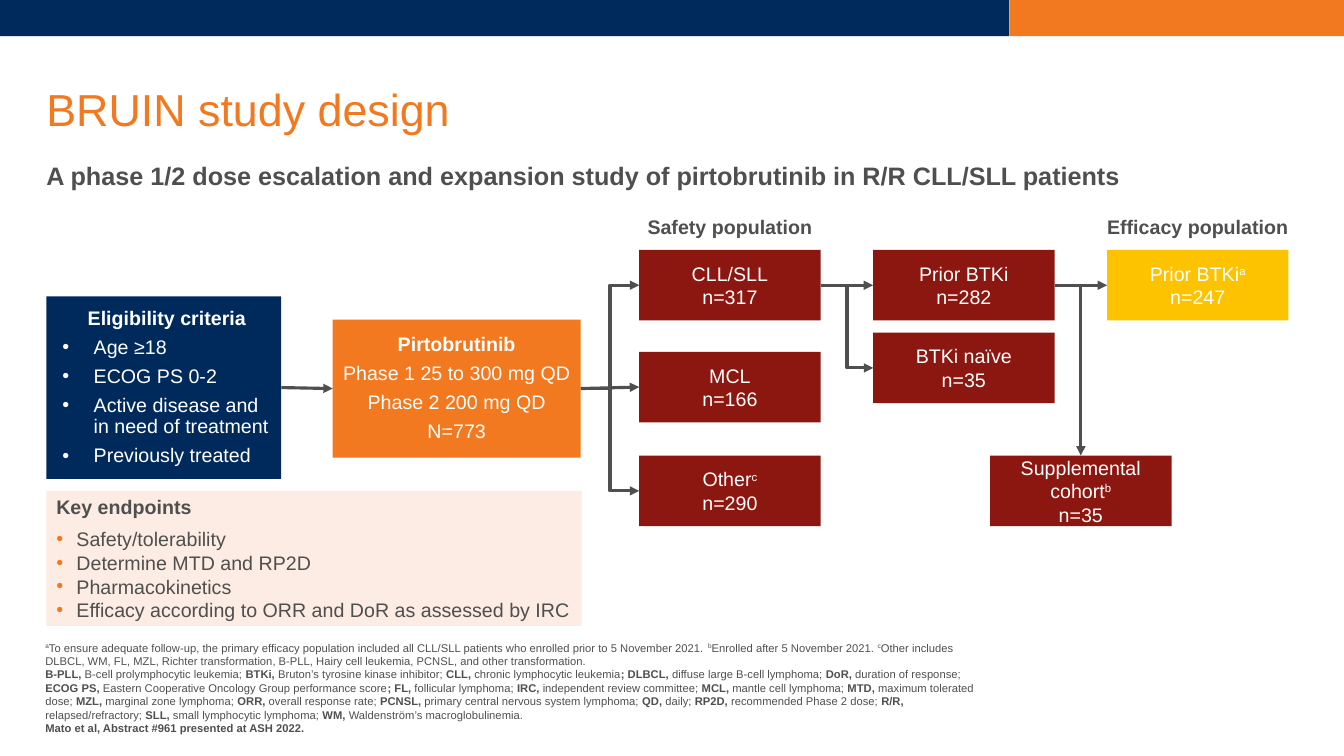
from lxml import etree
from pptx import Presentation, util as u
from pptx.dml.color import RGBColor
from pptx.enum import shapes, text
from pptx.oxml import ns

NAVY = RGBColor(0x00, 0x2A, 0x5C)
ORANGE = RGBColor(0xF3, 0x79, 0x20)
RED = RGBColor(0x8C, 0x16, 0x10)
GOLD = RGBColor(0xFD, 0xC3, 0x00)
PEACH = RGBColor(0xFD, 0xEC, 0xE3)
GREY = RGBColor(0x4E, 0x4F, 0x4E)
WHITE = RGBColor(0xFF, 0xFF, 0xFF)

MID = text.MSO_ANCHOR.MIDDLE
LOW = text.MSO_ANCHOR.BOTTOM
LEFT = {"alignment": text.PP_ALIGN.LEFT}
CENTER = {"alignment": text.PP_ALIGN.CENTER}
TIGHT = {"line_spacing": 0.9}
LOOSE = {**TIGHT, "space_after": u.Pt(5.6)}
SIDES = ("margin_left", "margin_top", "margin_right", "margin_bottom")
TOP, WEST, SOUTH, EAST = range(4)


def put(item, form):
    for name, value in form.items():
        setattr(item, name, value)


def add(parent, tag, **attrs):
    return etree.SubElement(parent, ns.qn(tag), attrs)


class Deck:
    def __init__(self):
        self.file = Presentation()
        put(self.file, {"slide_width": u.Inches(13.33), "slide_height": u.Inches(7.5)})
        self.slide = self.file.slides.add_slide(self.file.slide_layouts[6])
        self.font = {"name": "Arial", "size": u.Pt(14)}

    def box(self, place, fill):
        box = self.slide.shapes.add_shape(shapes.MSO_SHAPE.RECTANGLE, *map(u.Inches, place))
        box.shadow.inherit = False
        box.fill.solid()
        box.fill.fore_color.rgb = fill
        box.line.fill.background()
        return box

    def words(self, shape, lines, ink=WHITE, size=14, anchor=MID,
              pads=(0.1, 0.05, 0.1, 0.05), head=CENTER, item=LEFT, indent=0.2, dot=None):
        frame = shape.text_frame
        put(frame, {"word_wrap": True, "vertical_anchor": anchor})
        put(frame, dict(zip(SIDES, map(u.Inches, pads))))
        for num, line in enumerate(lines):
            para = frame.paragraphs[0] if num == 0 else frame.add_paragraph()
            listed = line.startswith("•")
            if listed:
                self.bullet(para, indent, dot)
            put(para, item if listed else head)
            self.runs(para, line.lstrip("• "), ink, size)

    def bullet(self, para, indent, dot):
        props = para._p.get_or_add_pPr()
        props.set("marL", str(u.Inches(indent)))
        props.set("indent", str(-u.Inches(indent)))
        if dot:
            add(add(props, "a:buClr"), "a:srgbClr", val=str(dot))
        add(props, "a:buFont", typeface="Arial")
        add(props, "a:buChar", char="•")

    def runs(self, para, line, ink, size):
        for odd, part in enumerate(line.split("*")):
            for high, bit in enumerate(part.split("^")):
                if not bit:
                    continue
                run = para.add_run()
                run.text = bit
                put(run.font, {**self.font, "size": u.Pt(size), "bold": odd % 2 == 1})
                run.font.color.rgb = ink
                if high % 2:
                    run.font._element.set("baseline", "30000")

    def label(self, place, lines, **style):
        self.words(self.slide.shapes.add_textbox(*map(u.Inches, place)), lines, **style)

    def node(self, left, top, lines, fill=RED):
        node = self.box((left, top, 1.8, 0.7), fill)
        self.words(node, lines)
        return node

    def arrow(self, start, end, first=None, last=None, bent=False):
        kind = shapes.MSO_CONNECTOR.ELBOW if bent else shapes.MSO_CONNECTOR.STRAIGHT
        line = self.slide.shapes.add_connector(kind, *map(u.Inches, start + end))
        if first:
            line.begin_connect(*first)
        if last:
            line.end_connect(*last)
        line.line.color.rgb = GREY
        line.line.width = u.Pt(2.25)
        add(line.line._get_or_add_ln(), "a:tailEnd", type="triangle")
        add(line._element.spPr, "a:effectLst")


def main():
    deck = Deck()
    deck.box((0, 0, 10.01, 0.36), NAVY)
    deck.box((10.01, 0, 3.32, 0.36), ORANGE)

    flat = {"pads": (0, 0, 0, 0)}
    deck.label((0.46, 0.63, 12.43, 0.72), ["BRUIN study design"], ink=ORANGE, size=32,
               anchor=LOW, head={**LEFT, **TIGHT}, **flat)
    deck.label((0.46, 1.4, 12.43, 0.71),
               ["*A phase 1/2 dose escalation and expansion study of pirtobrutinib "
                "in R/R CLL/SLL patients*"],
               ink=GREY, size=18, head={**LEFT, **TIGHT}, **flat)
    for left, name in ((5.92, "Safety"), (10.56, "Efficacy")):
        deck.label((left, 2.08, 2.64, 0.34), [f"*{name} population*"], ink=GREY)

    entry = deck.box((0.46, 2.94, 2.33, 1.81), NAVY)
    deck.words(entry, ["*Eligibility criteria*", "• Age ≥18", "• ECOG PS 0-2",
                       "• Active disease and in need of treatment", "• Previously treated"],
               anchor=text.MSO_ANCHOR.TOP, pads=(0.16, 0.12, 0.1, 0.06),
               head={**CENTER, **LOOSE}, item={**LEFT, **LOOSE}, indent=0.31)
    drug = deck.box((3.3, 3.17, 2.46, 1.37), ORANGE)
    deck.words(drug, ["*Pirtobrutinib*", "Phase 1 25 to 300 mg QD", "Phase 2 200 mg QD", "N=773"],
               pads=(0.1, 0.06, 0.1, 0.06), head={**CENTER, **LOOSE})
    goals = deck.box((0.46, 4.87, 5.31, 1.34), PEACH)
    deck.words(goals, ["*Key endpoints*", "• Safety/tolerability", "• Determine MTD and RP2D",
                       "• Pharmacokinetics",
                       "• Efficacy according to ORR and DoR as assessed by IRC"],
               ink=GREY, head={**LEFT, "space_after": u.Pt(6)}, dot=ORANGE)

    cll = deck.node(6.34, 2.48, ["CLL/SLL", "n=317"])
    mcl = deck.node(6.34, 3.49, ["MCL", "n=166"])
    other = deck.node(6.34, 4.52, ["Other^c^", "n=290"])
    prior = deck.node(8.66, 2.48, ["Prior BTKi", "n=282"])
    naive = deck.node(8.66, 3.3, ["BTKi naïve", "n=35"])
    final = deck.node(10.98, 2.48, ["Prior BTKi^a^", "n=247"], GOLD)
    extra = deck.node(9.82, 4.52, ["Supplemental cohort^b^", "n=35"])

    for start, end, bent in ((entry, drug, False), (drug, other, True), (drug, cll, True),
                             (drug, mcl, False), (cll, naive, True), (cll, prior, False),
                             (prior, final, False)):
        deck.arrow((0, 0), (1, 1), (start, EAST), (end, WEST), bent)
    deck.arrow((10.72, 2.83), (10.72, 4.52), last=(extra, TOP))

    deck.label((0.45, 6.62, 9.33, 0.67), [
        "^a^To ensure adequate follow-up, the primary efficacy population included all CLL/SLL "
        "patients who enrolled prior to 5 November 2021. ^b^Enrolled after 5 November 2021. "
        "^c^Other includes DLBCL, WM, FL, MZL, Richter transformation, B-PLL, Hairy cell "
        "leukemia, PCNSL, and other transformation.",
        "*B-PLL, *B-cell prolymphocytic leukemia; *BTKi, *Bruton’s tyrosine kinase inhibitor; "
        "*CLL, *chronic lymphocytic leukemia*; DLBCL, *diffuse large B-cell lymphoma; "
        "*DoR, *duration of response; *ECOG PS, *Eastern Cooperative Oncology Group performance "
        "score*; FL, *follicular lymphoma; *IRC, *independent review committee; "
        "*MCL, *mantle cell lymphoma; *MTD, *maximum tolerated dose; "
        "*MZL, *marginal zone lymphoma; *ORR, *overall response rate; "
        "*PCNSL,* primary central nervous system lymphoma; *QD, *daily; "
        "*RP2D, *recommended Phase 2 dose; *R/R, *relapsed/refractory; "
        "*SLL, *small lymphocytic lymphoma; *WM, *Waldenström’s macroglobulinemia.",
        "*Mato et al, Abstract #961 presented at ASH 2022.*",
    ], ink=GREY, size=8, anchor=LOW, head=LEFT, **flat)

    deck.file.save("out.pptx")


if __name__ == "__main__":
    main()
